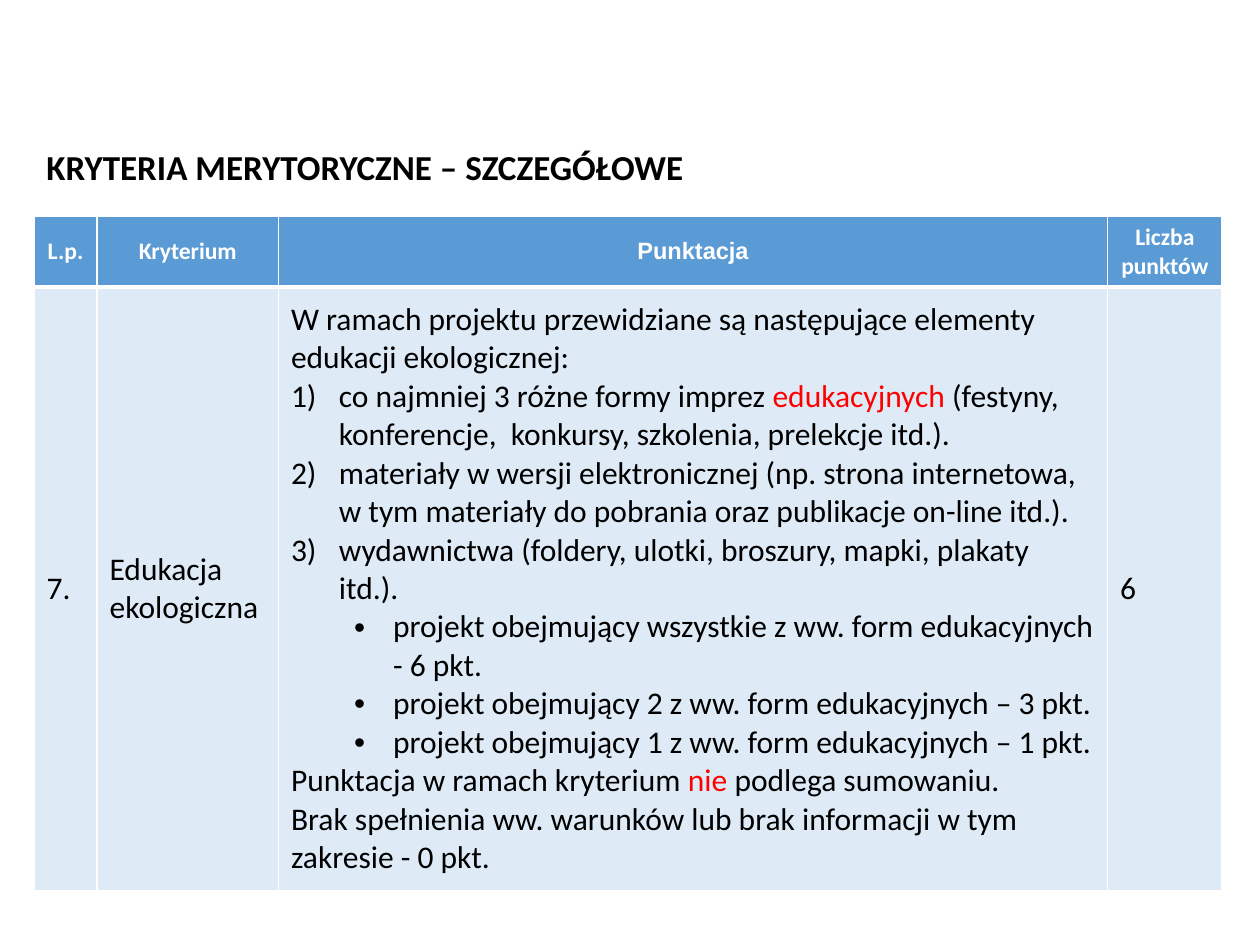
from lxml import etree
from pptx import Presentation
from pptx.dml.color import RGBColor
from pptx.enum.text import MSO_ANCHOR, MSO_AUTO_SIZE, PP_ALIGN
from pptx.oxml.ns import qn
from pptx.util import Inches, Pt

MIDDLE = MSO_ANCHOR.MIDDLE
FIT_SHAPE = MSO_AUTO_SIZE.SHAPE_TO_FIT_TEXT
LEFT, CENTER, JUSTIFY = PP_ALIGN.LEFT, PP_ALIGN.CENTER, PP_ALIGN.JUSTIFY

WHITE = RGBColor(0xFF, 0xFF, 0xFF)
BLACK = RGBColor(0x00, 0x00, 0x00)
RED = RGBColor(0xFF, 0x00, 0x00)
BLUE = RGBColor(0x5B, 0x9B, 0xD5)
PALE_BLUE = RGBColor(0xDE, 0xEB, 0xF7)

TITLE = {"name": "Calibri", "size": Pt(20), "bold": True}
HEADER = {"name": "Calibri", "size": Pt(13.5), "bold": True}
HEADER_ARIAL = {**HEADER, "name": "Arial"}
BODY = {"name": "Calibri", "size": Pt(18), "bold": False}

# List styles: level, left margin, hanging indent, tab stop, bullet tag and attributes
NUMBERED = (0, 0.38, -0.38, 0.5, "a:buAutoNum", {"type": "arabicParenR"})
BULLETED = (1, 0.81, -0.31, 1, "a:buChar", {"char": "•"})

# Each paragraph: runs (text, colour), alignment, list style
SCORING = [
    ([("W ramach projektu przewidziane są następujące elementy edukacji ekologicznej:", BLACK)],
     LEFT, None),
    ([("co najmniej 3 różne formy imprez ", BLACK), ("edukacyjnych", RED),
      (" (festyny, konferencje,  konkursy, szkolenia, prelekcje itd.).", BLACK)], LEFT, NUMBERED),
    ([("materiały w wersji elektronicznej (np. strona internetowa, w tym materiały "
       "do pobrania oraz publikacje on-line itd.).", BLACK)], LEFT, NUMBERED),
    ([("wydawnictwa (foldery, ulotki, broszury, mapki, plakaty itd.).", BLACK)], LEFT, NUMBERED),
    ([("projekt obejmujący wszystkie z ww. form edukacyjnych - 6 pkt.", BLACK)], LEFT, BULLETED),
    ([("projekt obejmujący 2 z ww. form edukacyjnych – 3 pkt.", BLACK)], LEFT, BULLETED),
    ([("projekt obejmujący 1 z ww. form edukacyjnych – 1 pkt.", BLACK)], LEFT, BULLETED),
    ([("Punktacja w ramach kryterium ", BLACK), ("nie", RED), (" podlega sumowaniu.", BLACK)],
     JUSTIFY, None),
    ([("Brak spełnienia ww. warunków lub brak informacji w tym zakresie - 0 pkt.", BLACK)],
     LEFT, None),
]


def line(text, color=BLACK, alignment=LEFT):
    return [([(text, color)], alignment, None)]


class SlideBuilder:
    def __init__(self, presentation):
        self.slide = presentation.slides.add_slide(presentation.slide_layouts[6])

    def list_style(self, paragraph, style):
        level, margin, indent, tab, tag, attributes = style
        paragraph.level = level
        properties = paragraph._p.get_or_add_pPr()
        properties.set("marL", str(Inches(margin)))
        properties.set("indent", str(Inches(indent)))
        etree.SubElement(properties, qn("a:buFont"),
                         typeface="Arial" if style is BULLETED else "+mj-lt")
        etree.SubElement(properties, qn(tag), attributes)
        tabs = etree.SubElement(properties, qn("a:tabLst"))
        etree.SubElement(tabs, qn("a:tab"), pos=str(Inches(tab)), algn="l")

    def fill_text(self, frame, paragraphs, text_format):
        for index, (runs, alignment, style) in enumerate(paragraphs):
            paragraph = frame.add_paragraph() if index else frame.paragraphs[0]
            paragraph.alignment = alignment
            if style:
                self.list_style(paragraph, style)
            for text, color in runs:
                run = paragraph.add_run()
                run.text = text
                for name, value in text_format.items():
                    setattr(run.font, name, value)
                run.font.color.rgb = color

    def text(self, left, top, width, height, paragraphs, text_format):
        shape = self.slide.shapes.add_textbox(
            Inches(left), Inches(top), Inches(width), Inches(height))
        frame = shape.text_frame
        settings = {"word_wrap": False, "auto_size": FIT_SHAPE, "vertical_anchor": MIDDLE}
        for name, value in settings.items():
            setattr(frame, name, value)
        self.fill_text(frame, paragraphs, text_format)

    def borders(self, cell, widths):
        properties = cell._tc.get_or_add_tcPr()
        for side, width in widths.items():
            border = etree.SubElement(properties, qn("a:ln" + side), w=str(Pt(width)))
            fill = etree.SubElement(border, qn("a:solidFill"))
            etree.SubElement(fill, qn("a:srgbClr"), val=str(WHITE))

    def table(self, left, top, columns, heights, rows):
        table = self.slide.shapes.add_table(
            len(heights), len(columns), Inches(left), Inches(top),
            Inches(sum(columns)), Inches(sum(heights))).table
        for column, width in zip(table.columns, columns):
            column.width = Inches(width)
        for row, height, (fill, widths, contents) in zip(table.rows, heights, rows):
            row.height = Inches(height)
            for cell, (paragraphs, text_format) in zip(row.cells, contents):
                self.borders(cell, widths)
                cell.fill.solid()
                cell.fill.fore_color.rgb = fill
                cell.vertical_anchor = MIDDLE
                self.fill_text(cell.text_frame, paragraphs, text_format)


def main():
    presentation = Presentation()
    presentation.slide_width, presentation.slide_height = Inches(10), Inches(7.5)
    builder = SlideBuilder(presentation)

    # Criteria table
    header = [(line(text, WHITE, CENTER), text_format) for text, text_format in (
        ("L.p.", HEADER), ("Kryterium", HEADER),
        ("Punktacja", HEADER_ARIAL), ("Liczba punktów", HEADER))]
    body = [(paragraphs, BODY) for paragraphs in (
        line("7."), line("Edukacja ekologiczna"), SCORING, line("6"))]
    builder.table(0.27, 1.72, [0.5, 1.44, 6.58, 0.91], [0.55, 4.79], [
        (BLUE, {"L": 1, "R": 1, "T": 1, "B": 3}, header),
        (PALE_BLUE, {"L": 1, "R": 1, "T": 3, "B": 1}, body),
    ])

    # Heading
    builder.text(0.27, 1.1, 5.3, 0.44, line("KRYTERIA MERYTORYCZNE – SZCZEGÓŁOWE"), TITLE)

    presentation.save("out.pptx")


if __name__ == "__main__":
    main()
